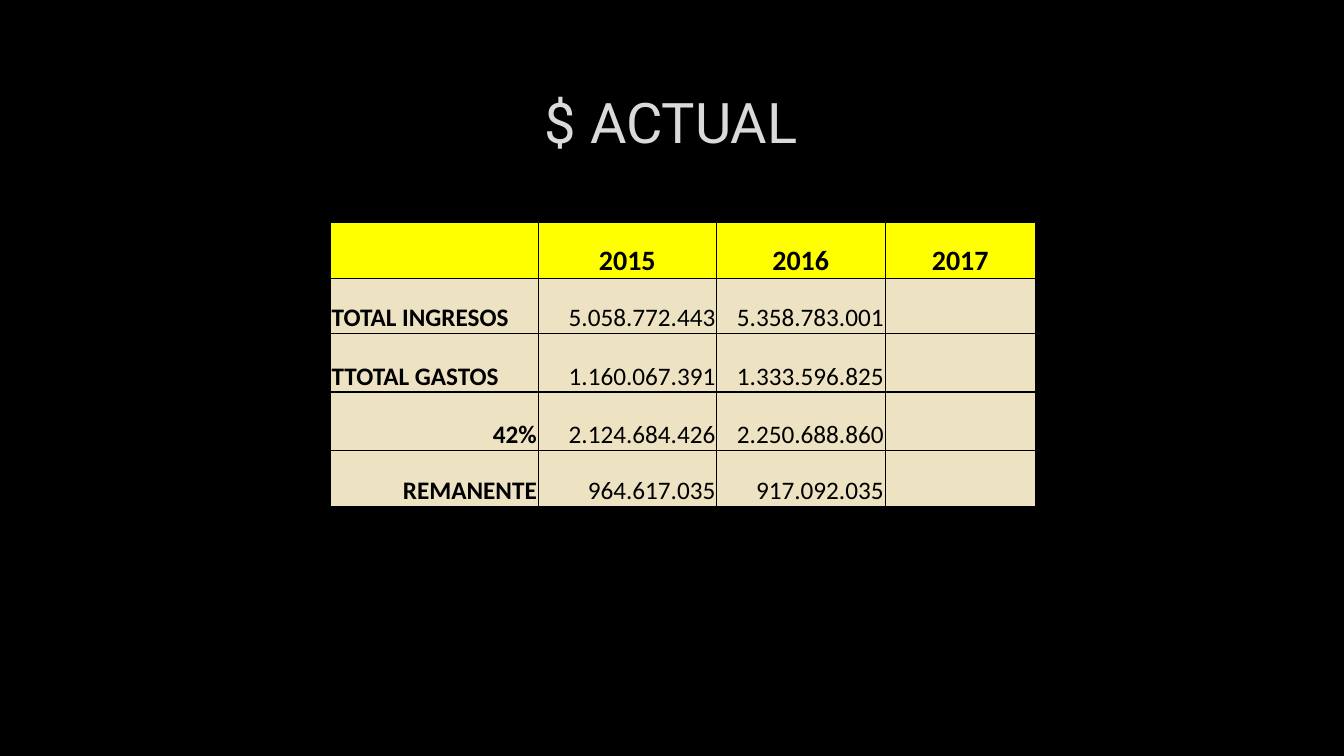
from lxml import etree
from pptx import Presentation
from pptx.dml.color import RGBColor
from pptx.enum.text import MSO_ANCHOR, PP_ALIGN
from pptx.oxml.ns import qn
from pptx.util import Cm, Pt

LEFT, CENTER, RIGHT = PP_ALIGN.LEFT, PP_ALIGN.CENTER, PP_ALIGN.RIGHT
MIDDLE, BOTTOM = MSO_ANCHOR.MIDDLE, MSO_ANCHOR.BOTTOM

BLACK = RGBColor(0x00, 0x00, 0x00)
SILVER = RGBColor(0xDA, 0xDA, 0xDA)
YELLOW = RGBColor(0xFF, 0xFF, 0x00)
CREAM = RGBColor(0xED, 0xE3, 0xC3)

TITLE = "$ ACTUAL"
ROWS = [
    ("", "2015", "2016", "2017"),
    ("TOTAL INGRESOS", "5.058.772.443", "5.358.783.001", ""),
    ("TTOTAL GASTOS", "1.160.067.391", "1.333.596.825", ""),
    ("42%", "2.124.684.426", "2.250.688.860", ""),
    ("REMANENTE", "964.617.035", "917.092.035", ""),
]
COLUMN_WIDTHS = [Cm(5.23), Cm(4.5), Cm(4.24), Cm(3.8)]
ROW_HEIGHTS = [Cm(1.4), Cm(1.4), Cm(1.47), Cm(1.47), Cm(1.4)]
LEFT_LABELS = ("TOTAL INGRESOS", "TTOTAL GASTOS")
PERCENT_ROW = 3
THIN, THICK = Pt(0.5), Pt(1)


def format_text(frame, font_name, size, color, bold, align):
    for para in frame.paragraphs:
        para.alignment = align
        for span in para.runs:
            span.font.name = font_name
            span.font.size = Pt(size)
            span.font.bold = bold
            span.font.color.rgb = color


def border_widths(row, column):
    return {
        "a:lnL": THICK if row == PERCENT_ROW and column == 0 else THIN,
        "a:lnR": THICK if row == PERCENT_ROW and column == 3 else THIN,
        "a:lnT": THICK if row >= PERCENT_ROW else THIN,
        "a:lnB": THICK if row in (PERCENT_ROW - 1, PERCENT_ROW) else THIN,
    }


def add_borders(cell, widths):
    properties = cell._tc.get_or_add_tcPr()
    for position, (tag, width) in enumerate(widths.items()):
        line = etree.Element(qn(tag), w=str(int(width)))
        fill = etree.SubElement(line, qn("a:solidFill"))
        etree.SubElement(fill, qn("a:srgbClr"), val=str(BLACK))
        properties.insert(position, line)


def cell_align(row, column, text):
    if row == 0:
        return CENTER
    return LEFT if text in LEFT_LABELS else RIGHT


def add_title(page):
    title = page.shapes.title
    title.left, title.top = Cm(2.54), Cm(1.7)
    title.width, title.height = Cm(28.75), Cm(2.69)
    title.text_frame.text = TITLE
    title.text_frame.vertical_anchor = MIDDLE
    format_text(title.text_frame, "Roboto", 40, SILVER, False, CENTER)


def add_balance_table(page):
    table = page.shapes.add_table(
        len(ROWS), len(COLUMN_WIDTHS), Cm(8.33), Cm(5.61),
        sum(COLUMN_WIDTHS), sum(ROW_HEIGHTS)).table
    for column, width in zip(table.columns, COLUMN_WIDTHS):
        column.width = width
    for row, height in zip(table.rows, ROW_HEIGHTS):
        row.height = height
    for row, texts in enumerate(ROWS):
        for column, text in enumerate(texts):
            cell = table.cell(row, column)
            cell.fill.solid()
            cell.fill.fore_color.rgb = CREAM if row else YELLOW
            add_borders(cell, border_widths(row, column))
            if text:
                cell.text_frame.text = text
                cell.vertical_anchor = BOTTOM
                cell.margin_left = cell.margin_right = cell.margin_top = Cm(0.03)
                cell.margin_bottom = 0
                format_text(cell.text_frame, "Calibri", 18 if row else 20, BLACK,
                            row == 0 or column == 0, cell_align(row, column, text))


def main():
    deck = Presentation()
    deck.slide_width, deck.slide_height = Cm(33.87), Cm(19.05)
    page = deck.slides.add_slide(deck.slide_layouts[5])
    page.background.fill.solid()
    page.background.fill.fore_color.rgb = BLACK
    add_title(page)
    add_balance_table(page)
    deck.save("out.pptx")


if __name__ == "__main__":
    main()
